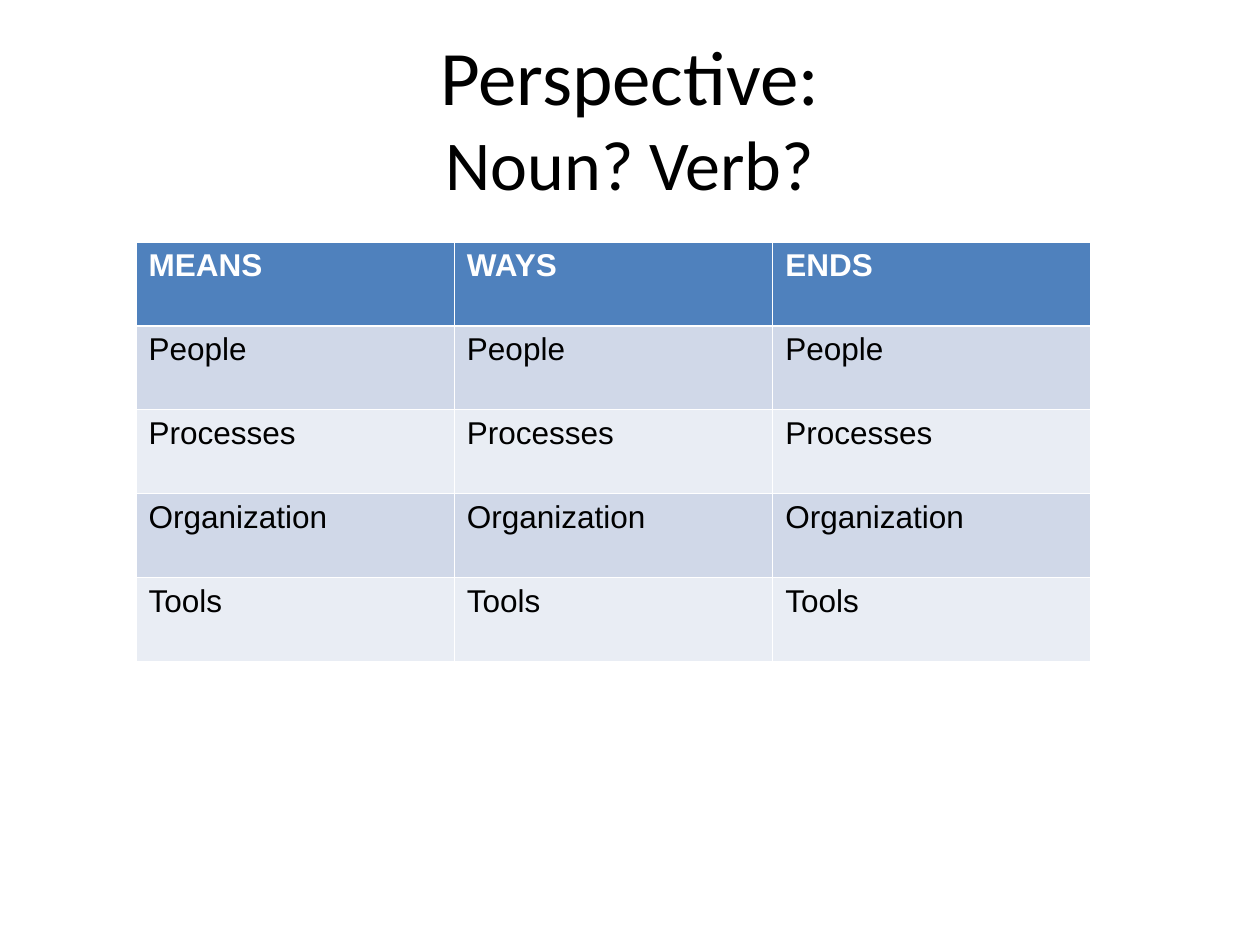
from pptx import Presentation
from pptx.dml.color import RGBColor
from pptx.enum.text import MSO_ANCHOR, PP_ALIGN
from pptx.util import Inches, Pt

BLACK = RGBColor(0x00, 0x00, 0x00)
WHITE = RGBColor(0xFF, 0xFF, 0xFF)
HEADER = RGBColor(0x4F, 0x81, 0xBD)
BANDS = [RGBColor(0xE9, 0xED, 0xF4), RGBColor(0xD0, 0xD8, 0xE8)]


def add_text(p, text, size=18, font="Arial", color=BLACK, bold=False):
    r = p.add_run()
    r.text = text
    r.font.size = Pt(size)
    r.font.name = font
    r.font.color.rgb = color
    r.font.bold = bold


prs = Presentation()
prs.slide_width, prs.slide_height = Inches(10), Inches(7.5)
s = prs.slides.add_slide(prs.slide_layouts[6])

sp = s.shapes.add_textbox(Inches(0.5), Inches(0.3), Inches(9), Inches(1.25))
tf = sp.text_frame
tf.word_wrap = True
tf.vertical_anchor = MSO_ANCHOR.MIDDLE
p = tf.paragraphs[0]
p.alignment = PP_ALIGN.CENTER
add_text(p, "Perspective:", size=44, font="Calibri")
p.add_line_break()
add_text(p, "Noun? Verb?", size=40, font="Calibri")

headers = ["MEANS", "WAYS", "ENDS"]
items = ["People", "Processes", "Organization", "Tools"]
rows = [headers] + [[item] * len(headers) for item in items]

table = s.shapes.add_table(len(rows), len(headers), Inches(1.08), Inches(1.92),
                           Inches(7.58), Inches(3.33)).table
for i, row in enumerate(rows):
    for j, text in enumerate(row):
        cell = table.cell(i, j)
        cell.fill.solid()
        cell.fill.fore_color.rgb = BANDS[i % 2] if i else HEADER
        add_text(cell.text_frame.paragraphs[0], text,
                 color=BLACK if i else WHITE, bold=i == 0)

prs.save("out.pptx")
